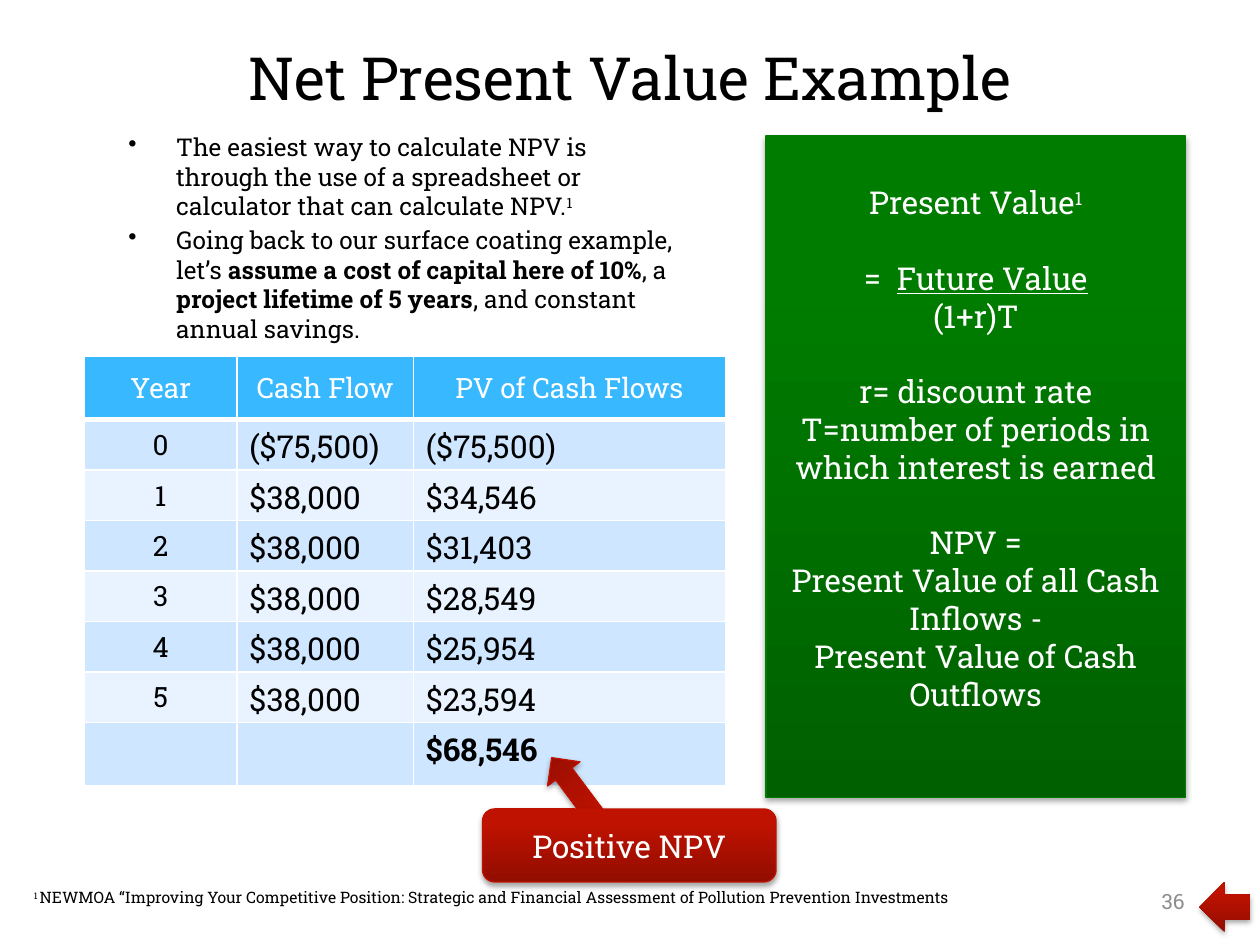
from lxml import etree
from pptx import Presentation
from pptx.dml.color import RGBColor
from pptx.enum.shapes import MSO_SHAPE
from pptx.enum.text import MSO_ANCHOR, PP_ALIGN
from pptx.oxml.ns import qn
from pptx.util import Inches, Pt

LEFT, CENTER, RIGHT = PP_ALIGN.LEFT, PP_ALIGN.CENTER, PP_ALIGN.RIGHT
TOP, MIDDLE = MSO_ANCHOR.TOP, MSO_ANCHOR.MIDDLE
RECT, ROUNDED = MSO_SHAPE.RECTANGLE, MSO_SHAPE.ROUNDED_RECTANGLE
RIGHT_ARROW, DOWN_ARROW = MSO_SHAPE.RIGHT_ARROW, MSO_SHAPE.DOWN_ARROW

FONT = "Roboto Slab"
COLORS = {
    "black": "000000", "white": "FFFFFF", "grey": "8C8C8C",
    "header": "38B8FF", "band_dark": "CEE6FF", "band_light": "E8F3FF",
    "green_dark": "006000", "green": "007D00",
    "red_dark": "920D00", "red": "BF1200",
}


def rgb(name):
    return RGBColor.from_string(COLORS[name])


def add_xml(parent, tag, **attrs):
    return etree.SubElement(parent, qn(tag), attrs)


class SlideBuilder:
    def __init__(self, slide):
        self.slide = slide

    def runs(self, p, parts, size, color):
        """A part is plain text or a (text, style) pair."""
        for part in parts:
            text, style = (part, None) if isinstance(part, str) else part
            r = p.add_run()
            r.text = text
            r.font.name, r.font.size = FONT, Pt(size)
            r.font.color.rgb = rgb(color)
            r.font.bold = style == "bold"
            if style == "underline":
                r.font.underline = True
            if style == "super":
                r.font._element.set("baseline", "30000")

    def paragraphs(self, tf, paragraphs, size, color, align=LEFT, anchor=TOP,
                   gaps=None, bullets=False):
        tf.word_wrap = True
        tf.vertical_anchor = anchor
        for i, parts in enumerate(paragraphs):
            p = tf.paragraphs[0] if i == 0 else tf.add_paragraph()
            p.alignment = align
            if gaps and i in gaps:
                p.space_before = Pt(gaps[i])
            if bullets:
                pPr = p._p.get_or_add_pPr()
                pPr.set("marL", str(Inches(0.38)))
                pPr.set("indent", str(-Inches(0.38)))
                add_xml(pPr, "a:buChar", char="•")
            self.runs(p, parts, size, color)

    def text(self, box, paragraphs, size, color="black", **layout):
        s = self.slide.shapes.add_textbox(*map(Inches, box))
        self.paragraphs(s.text_frame, paragraphs, size, color, **layout)

    def shape(self, kind, box, hue, outlined=True, rotation=0, flip=False):
        s = self.slide.shapes.add_shape(kind, *map(Inches, box))
        s.rotation = rotation
        if flip:
            s._element.spPr.get_or_add_xfrm().set("flipH", "1")
        # Dark at the bottom, reaching the full hue at 80 %
        s.fill.gradient()
        s.fill.gradient_angle = 90
        for stop, color, pos in zip(s.fill.gradient_stops, (hue + "_dark", hue), (0, 0.8)):
            stop.color.rgb = rgb(color)
            stop.position = pos
        if outlined:
            s.line.color.rgb = rgb(hue)
            s.line.width = Pt(0.75)
        else:
            s.line.fill.background()
        # Soft shadow below
        s.shadow.inherit = False
        effects = s._element.spPr.find(qn("a:effectLst"))
        shadow = add_xml(effects, "a:outerShdw", blurRad=str(Pt(3.1)), dist=str(Pt(1.8)),
                         dir="5400000", rotWithShape="0")
        shade = add_xml(shadow, "a:srgbClr", val=COLORS["black"])
        add_xml(shade, "a:alpha", val="35000")
        return s

    def cell(self, cell, text, size, color, fill, align, anchor, bold, bottom):
        tcPr = cell._tc.get_or_add_tcPr()
        for side, width in (("L", 1), ("R", 1), ("T", 1), ("B", bottom)):
            ln = add_xml(tcPr, "a:ln" + side, w=str(Pt(width)))
            add_xml(add_xml(ln, "a:solidFill"), "a:srgbClr", val=COLORS["white"])
        cell.fill.solid()
        cell.fill.fore_color.rgb = rgb(fill)
        cell.vertical_anchor = anchor
        if text:
            p = cell.text_frame.paragraphs[0]
            p.alignment = align
            self.runs(p, [(text, "bold" if bold else None)], size, color)

    def table(self, box, widths, heights, rows):
        t = self.slide.shapes.add_table(len(rows), len(widths), *map(Inches, box)).table
        for column, width in zip(t.columns, widths):
            column.width = Inches(width)
        for row, height in zip(t.rows, heights):
            row.height = Inches(height)
        for i, values in enumerate(rows):
            header, total = i == 0, i == len(rows) - 1
            fill = "header" if header else "band_dark" if i % 2 else "band_light"
            for j, value in enumerate(values):
                label = header or j == 0
                self.cell(t.cell(i, j), value, 16 if label else 18,
                          "white" if header else "black", fill,
                          CENTER if label else LEFT, MIDDLE if label else TOP,
                          total, 3 if header else 1)


def main():
    prs = Presentation()
    prs.slide_width, prs.slide_height = Inches(10), Inches(7.5)
    b = SlideBuilder(prs.slides.add_slide(prs.slide_layouts[6]))

    # Title, bullets and footnote
    b.text((0.5, 0.17, 9, 0.87), [["Net Present Value Example"]], 34,
           align=CENTER, anchor=MIDDLE)
    b.text((0.92, 1, 4.58, 1.67), [
        ["The easiest way to calculate NPV is through the use of a spreadsheet or "
         "calculator that can calculate NPV.", ("1", "super")],
        ["Going back to our surface coating example, let’s ",
         ("assume a cost of capital here of 10%", "bold"), ", a ",
         ("project lifetime of 5 years", "bold"), ", and constant annual savings."],
    ], 14, gaps={1: 2.8}, bullets=True)
    b.text((0.17, 7, 8.17, 0.25), [
        [("1 ", "super"), "NEWMOA “Improving Your Competitive Position: Strategic and "
         "Financial Assessment of Pollution Prevention Investments"]], 9)

    # Formula panel
    panel = b.shape(RECT, (6.08, 1.08, 3.33, 5.25), "green")
    panel.text_frame.margin_bottom = Inches(0.35)
    line = 21.6
    b.paragraphs(panel.text_frame, [
        ["Present Value", ("1", "super")],
        ["=  ", ("Future Value", "underline")],
        ["(1+r)T"],
        ["r= discount rate"],
        ["T=number of periods in which interest is earned"],
        ["NPV ="],
        ["Present Value of all Cash Inflows -"],
        ["Present Value of Cash Outflows"],
    ], 18, "white", align=CENTER, anchor=MIDDLE, gaps={1: line, 3: line, 5: line})

    # Cash flow table
    present_values = ["$34,546", "$31,403", "$28,549", "$25,954", "$23,594"]
    rows = [("Year", "Cash Flow", "PV of Cash Flows"), ("0", "($75,500)", "($75,500)")]
    rows += [(str(year), "$38,000", pv) for year, pv in enumerate(present_values, 1)]
    rows.append(("", "", "$68,546"))
    b.table((0.67, 2.83, 5.09, 3.4), [1.21, 1.4, 2.48], [0.5] + [0.4] * 6 + [0.5], rows)

    # Back arrow and page number
    b.shape(RIGHT_ARROW, (9.52, 7, 0.4, 0.4), "red", outlined=False, flip=True)
    b.text((7.17, 6.95, 2.33, 0.4), [["36"]], 12, "grey", align=RIGHT, anchor=MIDDLE)

    # Callout pointing at the total
    b.shape(DOWN_ARROW, (4.41, 5.95, 0.32, 0.64), "red", rotation=143.3)
    callout = b.shape(ROUNDED, (3.83, 6.42, 2.33, 0.58), "red")
    b.paragraphs(callout.text_frame, [["Positive NPV"]], 18, "white",
                 align=CENTER, anchor=MIDDLE)

    prs.save("out.pptx")


if __name__ == "__main__":
    main()
